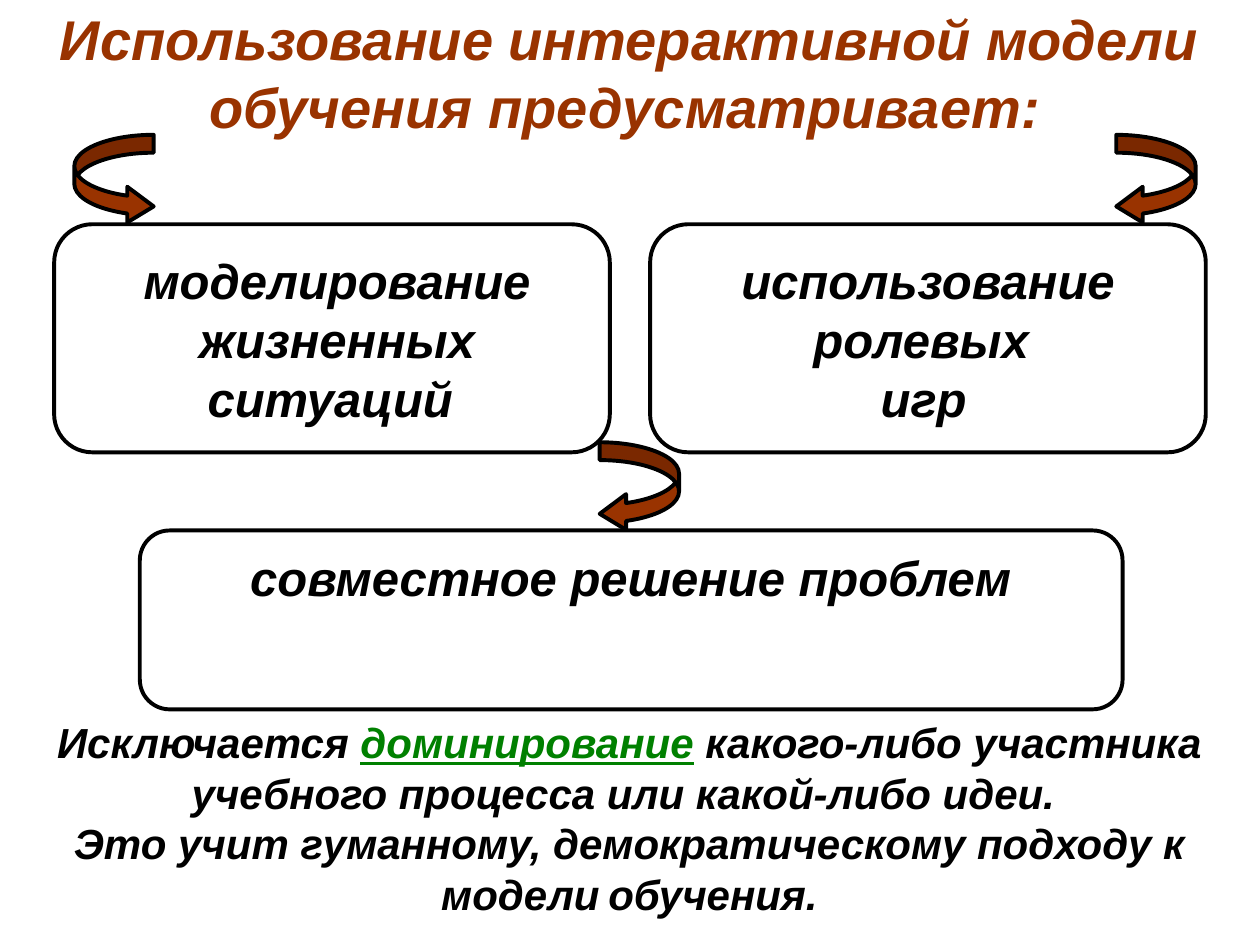
from pptx import Presentation
from pptx.dml.color import RGBColor
from pptx.enum.shapes import MSO_SHAPE as Shape
from pptx.enum.text import MSO_AUTO_SIZE as Fit, PP_ALIGN as Align
from pptx.util import Inches, Pt

COLORS = {"white": "FFFFFF", "black": "000000", "brown": "993300", "green": "008000"}


class Deck:
    font = "Arial"
    small = 18

    def __init__(self):
        self.prs = Presentation()
        self.prs.slide_width, self.prs.slide_height = Inches(10), Inches(7.5)
        self.slide = self.prs.slides.add_slide(self.prs.slide_layouts[6])

    def color(self, name):
        return RGBColor.from_string(COLORS[name])

    def shape(self, kind, box, fill, adjust):
        item = self.slide.shapes.add_shape(kind, *map(Inches, box))
        item.shadow.inherit = False
        item.fill.solid()
        item.fill.fore_color.rgb = self.color(fill)
        item.line.color.rgb = self.color("black")
        item.line.width = Pt(2.25)
        for i, value in enumerate(adjust):
            item.adjustments[i] = value

    def panel(self, *box):
        self.shape(Shape.ROUNDED_RECTANGLE, box, "white", [0.167])

    def arrow(self, kind, left, top):
        self.shape(kind, (left, top, 0.63, 0.71), "brown", [0.225, 0.45, 0.333])

    def text(self, box, parts, size, color="black"):
        frame = self.slide.shapes.add_textbox(*map(Inches, box)).text_frame
        frame.word_wrap = True
        frame.auto_size = Fit.SHAPE_TO_FIT_TEXT
        para = frame.paragraphs[0]
        para.alignment = Align.CENTER
        font = para.font
        font.name, font.size = self.font, Pt(size)
        font.bold = font.italic = True
        font.color.rgb = self.color(color)
        for part in parts:
            if part == "\n":
                para.add_line_break()
                continue
            run = para.add_run()
            run.text = part
            if part == " ":
                run.font.size = Pt(self.small)
                run.font.bold = run.font.italic = False
            elif part == "доминирование":
                run.font.color.rgb = self.color("green")
                run.font.underline = True


def main():
    deck = Deck()
    deck.text(
        (0.27, -0.01, 9.45, 1.17),
        ["Использование интерактивной модели обучения предусматривает:", " "],
        32,
        "brown",
    )
    for left in (0.43, 5.16):
        deck.panel(left, 1.78, 4.41, 1.81)
    deck.panel(1.11, 4.21, 7.8, 1.42)

    deck.arrow(Shape.CURVED_RIGHT_ARROW, 0.59, 1.07)
    for left, top in ((8.86, 1.07), (4.76, 3.51)):
        deck.arrow(Shape.CURVED_LEFT_ARROW, left, top)

    deck.text((0.51, 1.94, 4.33, 1.5), ["моделирование жизненных ситуаций "], 28)
    deck.text((5.16, 1.94, 4.41, 1.5), ["использование ролевых ", "\n", "игр", " "], 28)
    deck.text((1.14, 4.3, 7.8, 0.57), ["совместное решение проблем", " "], 28)
    deck.text(
        (0.27, 5.64, 9.45, 1.72),
        [
            "Исключается ",
            "доминирование",
            " какого-либо участника учебного процесса или какой-либо идеи. ",
            "\n",
            "Это учит гуманному, демократическому подходу к модели",
            " ",
            "обучения.",
        ],
        24,
    )
    deck.prs.save("out.pptx")


if __name__ == "__main__":
    main()
